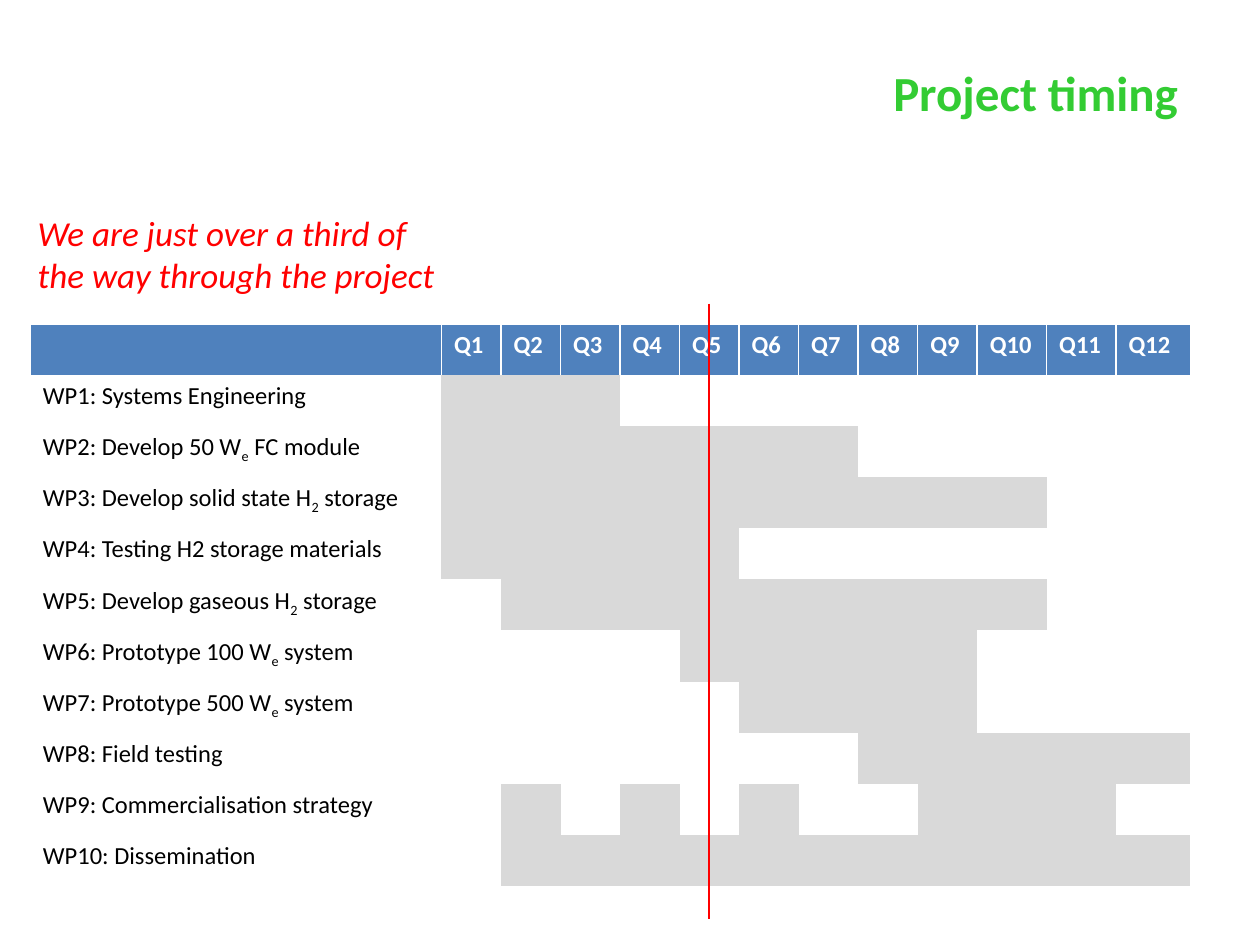
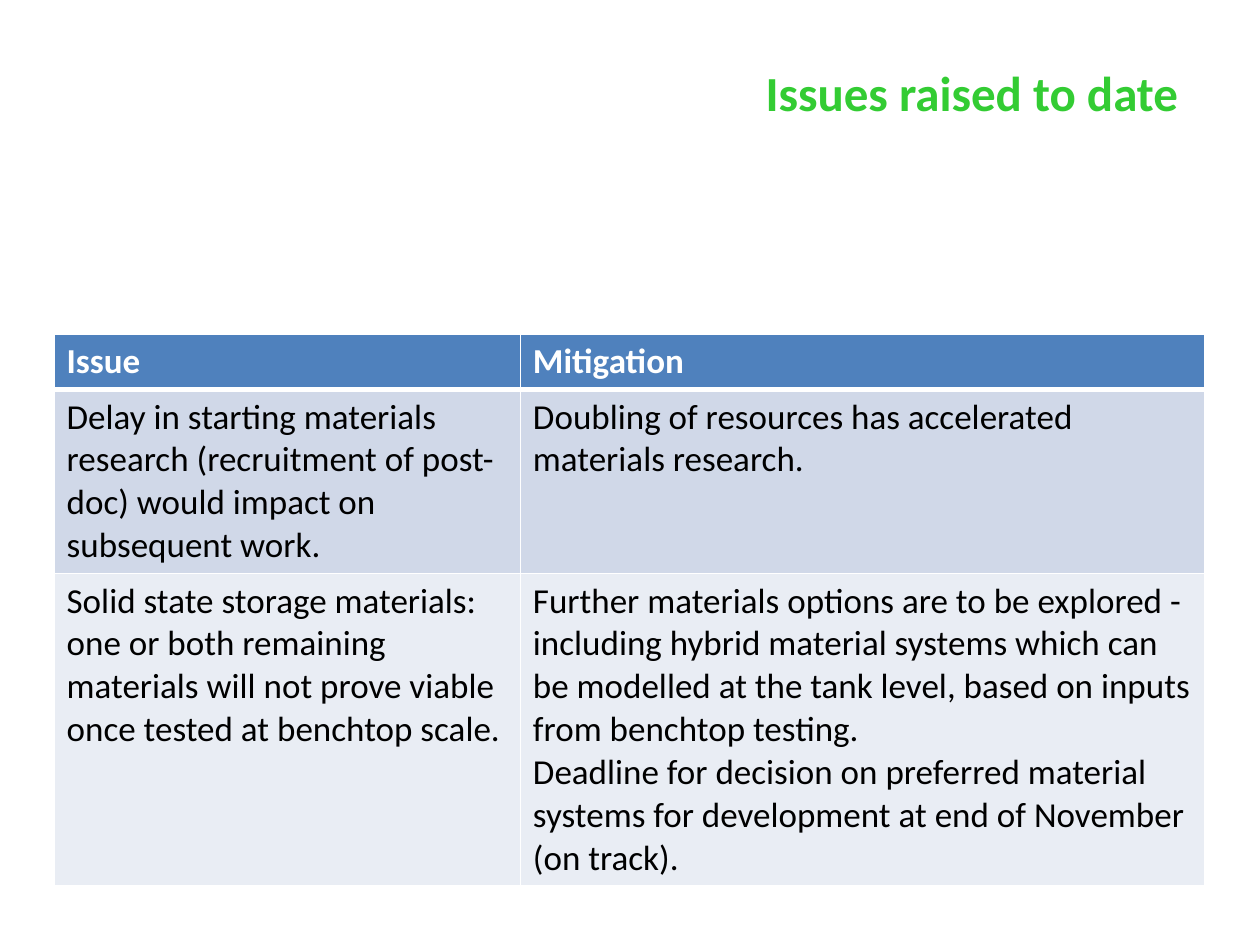
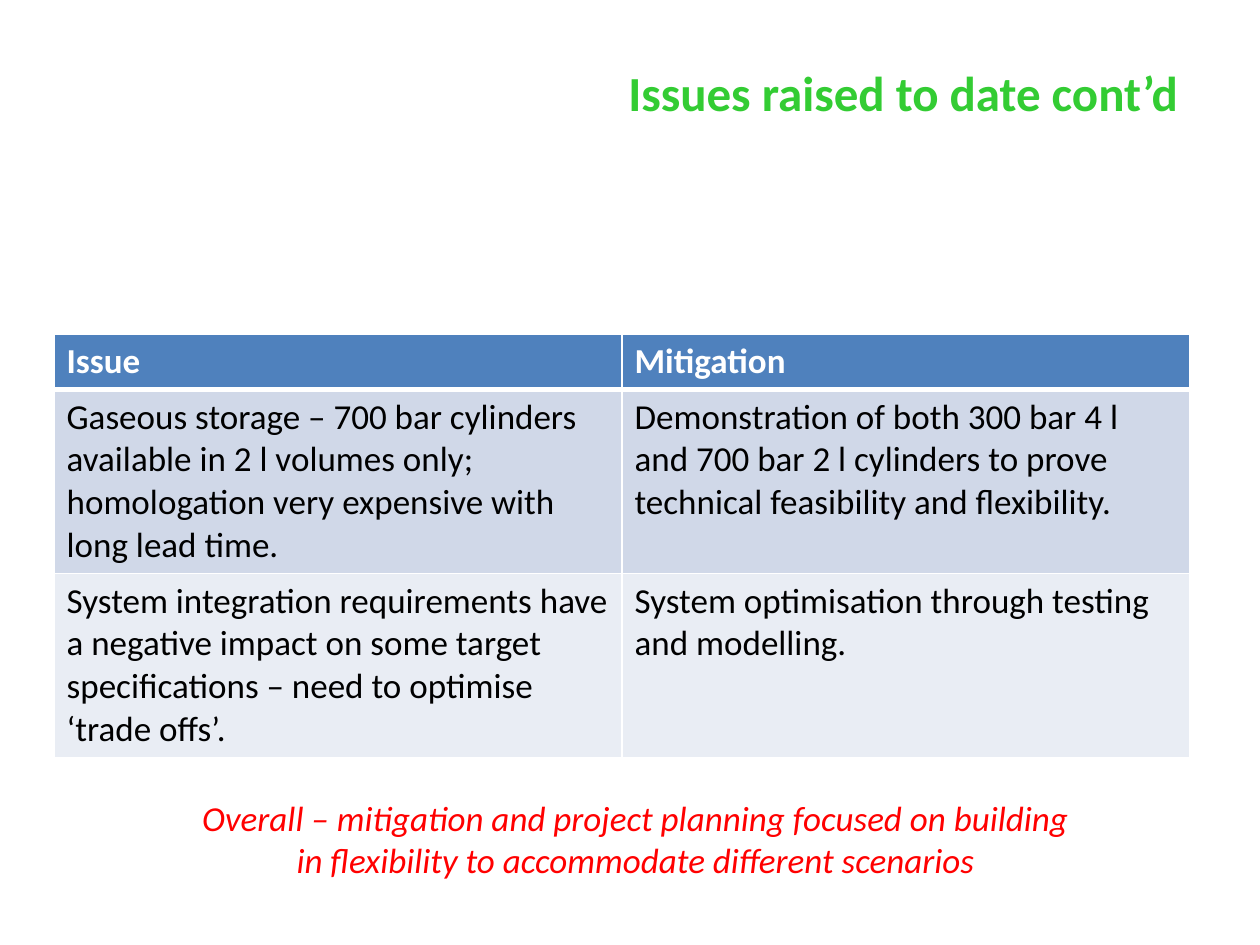
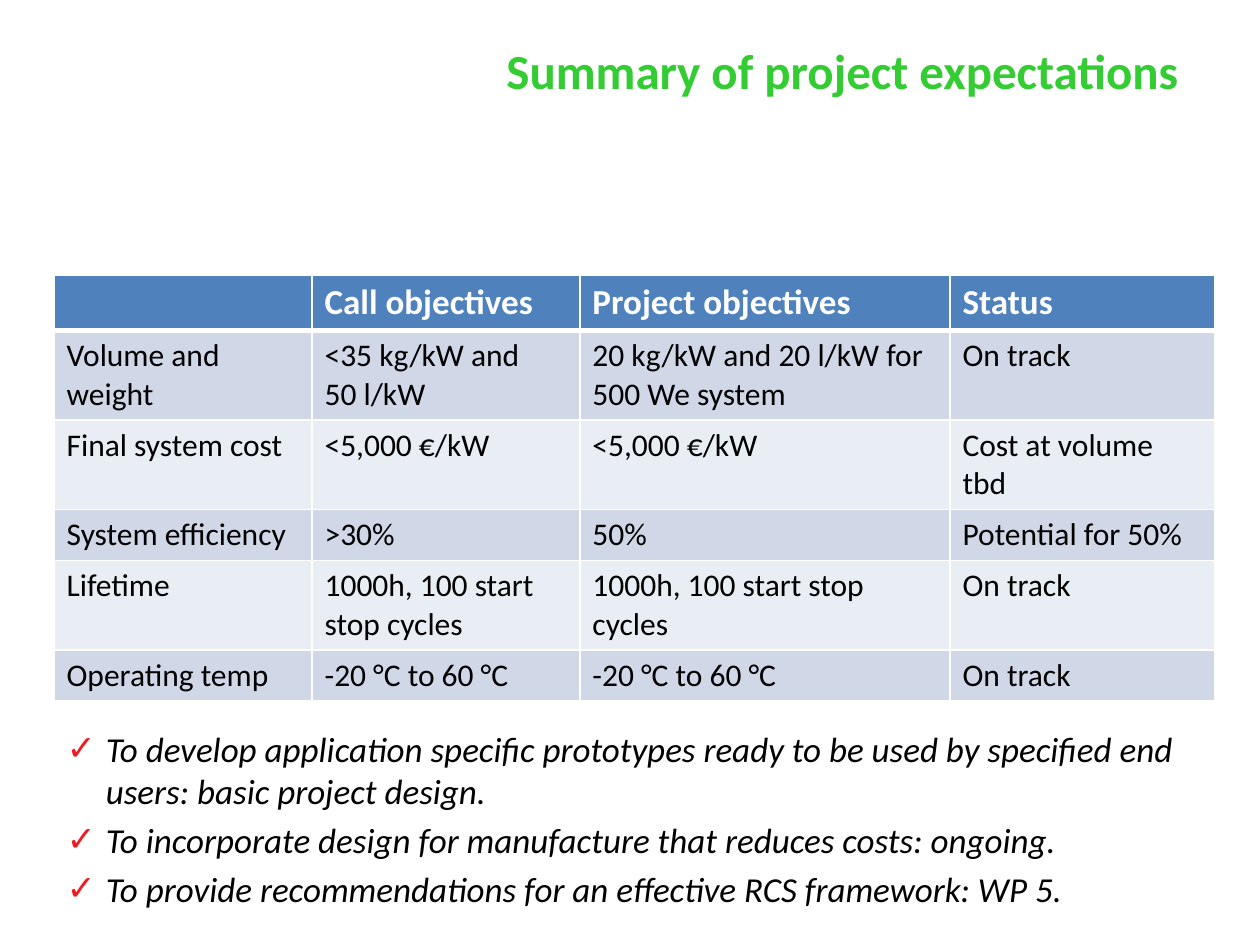
import pptx
import pptx.dml.color
import pptx.enum.shapes
import pptx.enum.text
import pptx.oxml
import pptx.oxml.ns
import pptx.util
from lxml import etree

Cm = pptx.util.Cm
Pt = pptx.util.Pt
RGBColor = pptx.dml.color.RGBColor
qn = pptx.oxml.ns.qn

FONT = "Calibri"
GREEN = RGBColor(0x33, 0xCC, 0x33)
RED = RGBColor(0xFF, 0x00, 0x00)
TICK_RED = RGBColor(0xED, 0x1C, 0x24)
BLACK = RGBColor(0x00, 0x00, 0x00)
WHITE = RGBColor(0xFF, 0xFF, 0xFF)
HEADER_BLUE = RGBColor(0x4F, 0x81, 0xBD)
BAND_DARK = RGBColor(0xD0, 0xD8, 0xE8)
BAND_LIGHT = RGBColor(0xE9, 0xED, 0xF4)
BUSY_GREY = RGBColor(0xD9, 0xD9, 0xD9)

LAYOUT_CONTENT = 1
LAYOUT_TITLE_ONLY = 5
NO_STYLE_NO_GRID = "{2D5ABB26-0587-4C30-8999-92F81FD0307C}"
TITLE_RIGHT = 24
TABLE_LEFT = 1.09
HEADER_HEIGHT = 1.1
GANTT_ROW = 1.03

# Text pieces alternate between normal and subscript.
WORK_PACKAGES = [
    (["WP1: Systems Engineering"], range(1, 4)),
    (["WP2: Develop 50 W", "e", " FC module"], range(1, 8)),
    (["WP3: Develop solid state H", "2", " storage"], range(1, 11)),
    (["WP4: Testing H2 storage materials"], range(1, 6)),
    (["WP5: Develop gaseous H", "2", " storage"], range(2, 11)),
    (["WP6: Prototype 100 W", "e", " system"], range(5, 10)),
    (["WP7: Prototype 500 W", "e", " system"], range(6, 10)),
    (["WP8: Field testing"], range(8, 13)),
    (["WP9: Commercialisation strategy"], [2, 4, 6, 9, 10, 11]),
    (["WP10: Dissemination"], range(2, 13)),
]

FIRST_ISSUES = [
    ["Issue", "Mitigation"],
    ["Delay in starting materials research (recruitment of post-doc) would "
     "impact on subsequent work.",
     "Doubling of resources has accelerated materials research."],
    ["Solid state storage materials: one or both remaining materials will not "
     "prove viable once tested at benchtop scale.",
     "Further materials options are to be explored - including hybrid material "
     "systems which can be modelled at the tank level, based on inputs from "
     "benchtop testing.\n"
     "Deadline for decision on preferred material systems for development at "
     "end of November (on track)."],
]

MORE_ISSUES = [
    ["Issue", "Mitigation"],
    ["Gaseous storage – 700 bar cylinders available in 2 l volumes only; "
     "homologation very expensive with long lead time.",
     "Demonstration of both 300 bar 4 l and 700 bar 2 l cylinders to prove "
     "technical feasibility and flexibility."],
    ["System integration requirements have a negative impact on some target "
     "specifications – need to optimise ‘trade offs’.",
     "System optimisation through testing and modelling."],
]

EXPECTATIONS = [
    ["", "Call objectives", "Project objectives", "Status"],
    ["Volume and weight", "<35 kg/kW and\n50 l/kW",
     "20 kg/kW and 20 l/kW for 500 We system", "On track"],
    ["Final system cost", "<5,000 €/kW", "<5,000 €/kW", "Cost at volume tbd"],
    ["System efficiency", ">30%", "50%", "Potential for 50%"],
    ["Lifetime", "1000h, 100 start stop cycles",
     "1000h, 100 start stop cycles", "On track"],
    ["Operating temp", "-20 °C to 60 °C", "-20 °C to 60 °C", "On track"],
]

GOALS = [
    "To develop application specific prototypes ready to be used by specified "
    "end users: basic project design.",
    "To incorporate design for manufacture that reduces costs: ongoing.",
    "To provide recommendations for an effective RCS framework: WP 5.",
]


def format_font(paragraph, size, color, bold=False, italic=False):
    font = paragraph.font
    font.name = FONT
    font.size = Pt(size)
    font.bold = bold
    font.italic = italic
    font.color.rgb = color


def place(shape, left, top, width, height):
    shape.left, shape.top = Cm(left), Cm(top)
    shape.width, shape.height = Cm(width), Cm(height)


def add_titled_slide(presentation, title, layout=LAYOUT_TITLE_ONLY, width=13.31):
    slide = presentation.slides.add_slide(presentation.slide_layouts[layout])
    shape = slide.shapes.title
    place(shape, TITLE_RIGHT - width, 0.74, width, 2.21)
    frame = shape.text_frame
    frame.text = title
    frame.auto_size = pptx.enum.text.MSO_AUTO_SIZE.NONE
    frame.vertical_anchor = pptx.enum.text.MSO_ANCHOR.MIDDLE
    paragraph = frame.paragraphs[0]
    paragraph.alignment = pptx.enum.text.PP_ALIGN.RIGHT
    format_font(paragraph, 28, GREEN, bold=True)
    return slide


def add_remark(slide, text, left, top, width, alignment):
    """Add a red italic comment."""
    box = slide.shapes.add_textbox(Cm(left), Cm(top), Cm(width), Cm(1.96))
    box.text_frame.word_wrap = True
    paragraph = box.text_frame.paragraphs[0]
    paragraph.text = text
    paragraph.alignment = alignment
    format_font(paragraph, 20, RED, italic=True)


def add_plain_table(slide, left, top, column_widths, row_heights):
    """Add a table without any style of its own."""
    table = slide.shapes.add_table(
        len(row_heights), len(column_widths), Cm(left), Cm(top),
        Cm(sum(column_widths)), Cm(sum(row_heights))).table
    table.horz_banding = False
    table._tbl.tblPr.find(qn("a:tableStyleId")).text = NO_STYLE_NO_GRID
    for column, width in zip(table.columns, column_widths):
        column.width = Cm(width)
    for row, height in zip(table.rows, row_heights):
        row.height = Cm(height)
    return table


def format_cell(cell, fill, **borders):
    """Fill the cell and draw white borders: L, R, T, B widths in points."""
    properties = cell._tc.get_or_add_tcPr()
    for side in "LRTB":
        if side in borders:
            line = etree.SubElement(properties, qn(f"a:ln{side}"),
                                    w=str(Pt(borders[side])))
            solid = etree.SubElement(line, qn("a:solidFill"))
            etree.SubElement(solid, qn("a:srgbClr"), val=str(WHITE))
    cell.fill.solid()
    cell.fill.fore_color.rgb = fill


def write_cell(cell, text, size, color, bold=False):
    cell.text = text
    for paragraph in cell.text_frame.paragraphs:
        format_font(paragraph, size, color, bold)


def add_gantt(slide):
    widths = [8.29] + [1.2] * 9 + [1.4, 1.4, 1.5]
    table = add_plain_table(slide, 0.61, 6.53, widths,
                            [GANTT_ROW] * (len(WORK_PACKAGES) + 1))
    for quarter in range(len(widths)):
        cell = table.cell(0, quarter)
        format_cell(cell, HEADER_BLUE, L=1, R=1, T=1)
        if quarter:
            write_cell(cell, f"Q{quarter}", 14, WHITE, bold=True)
    for row, (pieces, busy_quarters) in enumerate(WORK_PACKAGES, start=1):
        paragraph = table.cell(row, 0).text_frame.paragraphs[0]
        for index, piece in enumerate(pieces):
            run = paragraph.add_run()
            run.text = piece
            if index % 2:
                run._r.get_or_add_rPr().set("baseline", "-25000")
        format_font(paragraph, 14, BLACK)
        for quarter in range(len(widths)):
            format_cell(table.cell(row, quarter),
                        BUSY_GREY if quarter in busy_quarters else WHITE)


def add_banded_table(slide, rows, top, column_widths, body_heights, body_size=20):
    table = add_plain_table(slide, TABLE_LEFT, top, column_widths,
                            [HEADER_HEIGHT] + body_heights)
    for row, texts in enumerate(rows):
        for column, text in enumerate(texts):
            cell = table.cell(row, column)
            if row == 0:
                format_cell(cell, HEADER_BLUE, L=1, R=1, T=1, B=3)
                write_cell(cell, text, 20, WHITE, bold=True)
            else:
                format_cell(cell, BAND_DARK if row % 2 else BAND_LIGHT,
                            L=1, R=1, B=1)
                write_cell(cell, text, body_size, BLACK)


def add_today_line(slide):
    x = Cm(14.3)
    line = slide.shapes.add_connector(
        pptx.enum.shapes.MSO_CONNECTOR.STRAIGHT, x, Cm(6.12), x, Cm(18.52))
    line.line.color.rgb = RED
    line.line.width = Pt(1.25)
    etree.SubElement(line._element.spPr, qn("a:effectLst"))


def fill_tick_list(shape, items):
    place(shape, TABLE_LEFT, 14.53, 23.6, 4.01)
    frame = shape.text_frame
    frame.text = "\n".join(items)
    frame.auto_size = pptx.enum.text.MSO_AUTO_SIZE.NONE
    for index, paragraph in enumerate(frame.paragraphs):
        properties = paragraph._p.get_or_add_pPr()
        properties.set("marL", str(Cm(0.79)))
        properties.set("indent", str(-Cm(0.79)))
        paragraph.space_before = Pt(4 if index else 0)
        color = etree.SubElement(properties, qn("a:buClr"))
        etree.SubElement(color, qn("a:srgbClr"), val=str(TICK_RED))
        etree.SubElement(properties, qn("a:buChar"), char="✓")
        format_font(paragraph, 20, BLACK, italic=True)


def main():
    presentation = pptx.Presentation()
    presentation.slide_width, presentation.slide_height = Cm(25.4), Cm(19.05)
    align = pptx.enum.text.PP_ALIGN

    timing = add_titled_slide(presentation, "Project timing")
    add_gantt(timing)
    add_today_line(timing)
    add_remark(timing, "We are just over a third of the way through the project",
               0.51, 4.14, 8.99, align.LEFT)

    issues = add_titled_slide(presentation, "Issues raised to date")
    add_banded_table(issues, FIRST_ISSUES, 6.73, [9.4, 13.79], [3.71, 6.3])

    more_issues = add_titled_slide(presentation, "Issues raised to date cont’d")
    add_banded_table(more_issues, MORE_ISSUES, 6.73, [11.45, 11.45], [3.71, 3.71])
    add_remark(more_issues,
               "Overall – mitigation and project planning focused on building "
               "in flexibility to accommodate different scenarios",
               3.71, 15.93, 18.21, align.CENTER)

    summary = add_titled_slide(presentation, "Summary of project expectations",
                               LAYOUT_CONTENT, width=14.5)
    summary.shapes.title.text_frame.margin_bottom = Cm(1)
    add_banded_table(summary, EXPECTATIONS, 5.54, [5.2, 5.4, 7.46, 5.34],
                     [1.8, 1.8, 1.03, 1.8, 1.03], body_size=18)
    fill_tick_list(summary.placeholders[1], GOALS)

    presentation.save("out.pptx")


if __name__ == "__main__":
    main()
